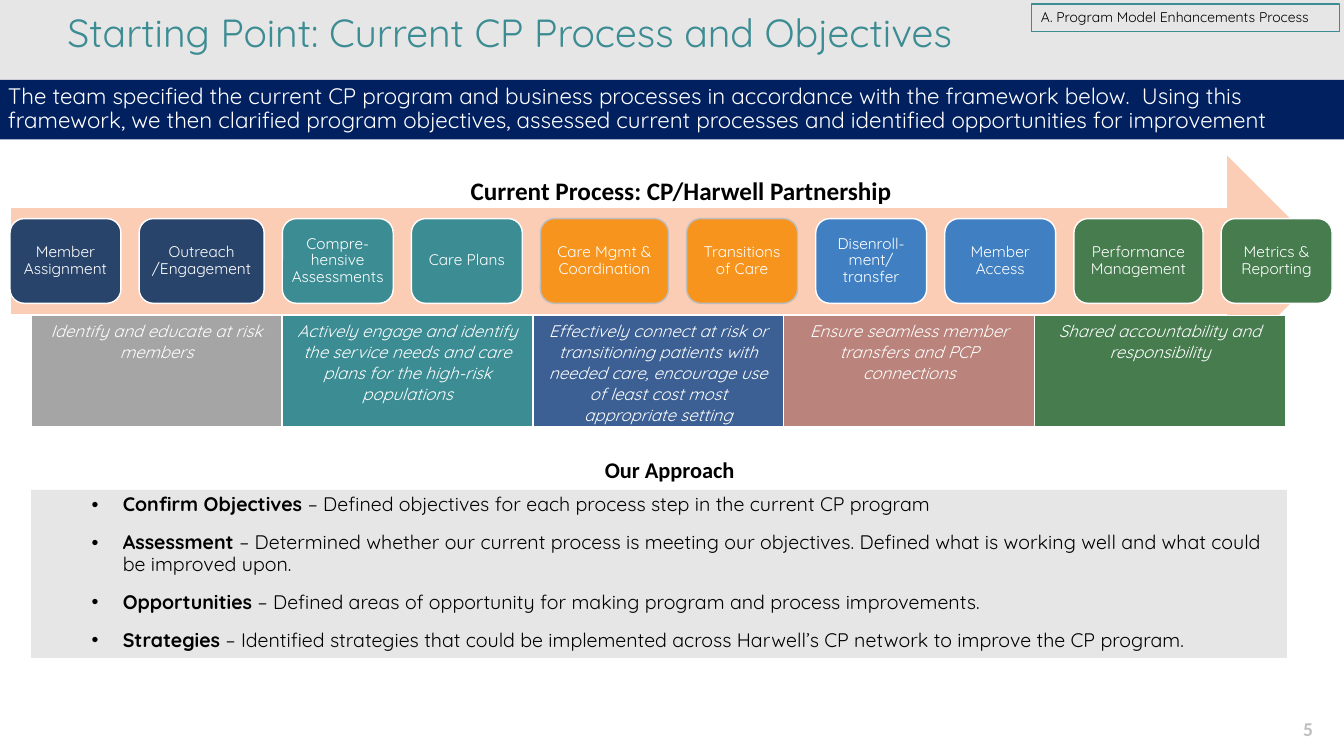
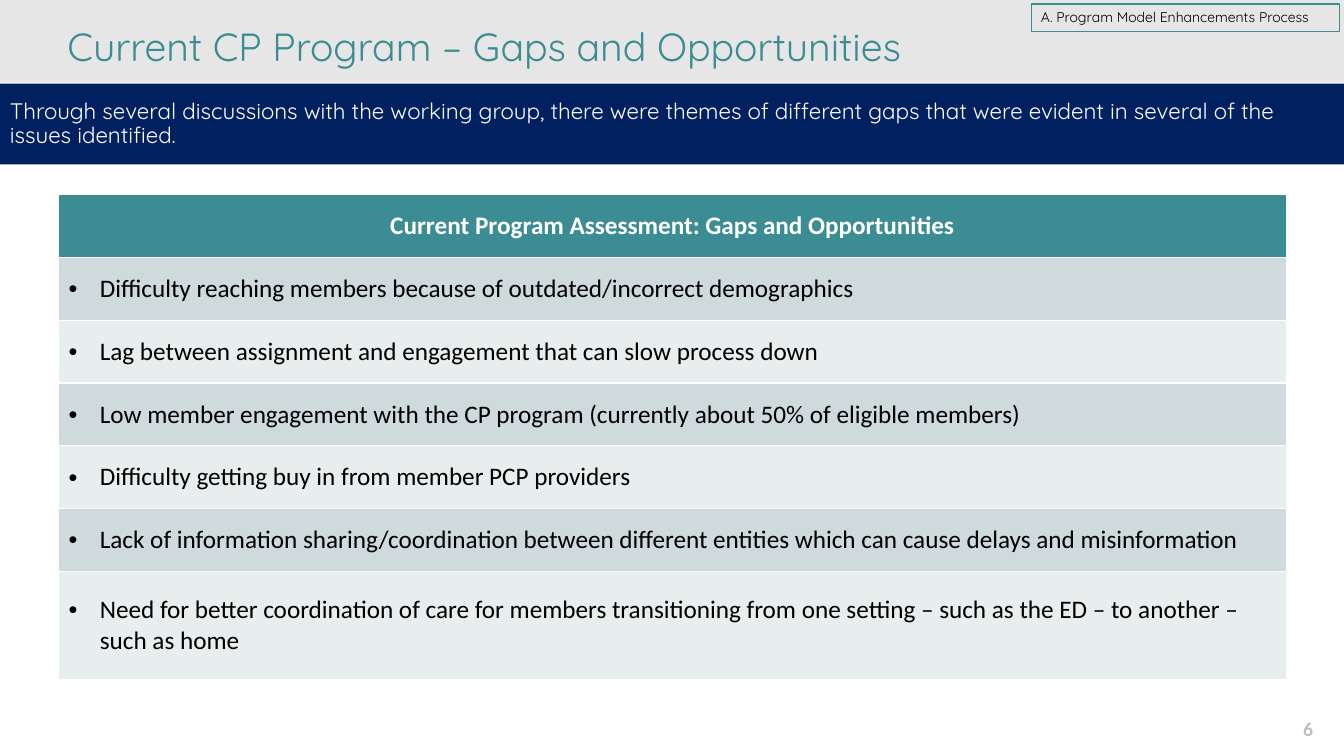
from dataclasses import dataclass

from lxml.etree import SubElement
from pptx import Presentation
from pptx.dml.color import RGBColor
from pptx.enum.shapes import MSO_SHAPE
from pptx.enum.text import MSO_ANCHOR, MSO_AUTO_SIZE, PP_ALIGN
from pptx.oxml.ns import qn
from pptx.util import Inches, Pt

WIDTH, HEIGHT = Inches(13.333), Inches(7.5)
COLUMNS, ROWS = 96, 54
FIRST_NUMBER = 5

WHITE = RGBColor(0xFF, 0xFF, 0xFF)
BLACK = RGBColor(0x00, 0x00, 0x00)
TEAL = RGBColor(0x3C, 0x8C, 0x93)
NAVY = RGBColor(0x00, 0x20, 0x60)
PALE_GREY = RGBColor(0xE7, 0xE6, 0xE6)
NUMBER_GREY = RGBColor(0xBF, 0xBF, 0xBF)
OUTLINE_GREY = RGBColor(0xBD, 0xBD, 0xBD)
GREY = RGBColor(0xA5, 0xA5, 0xA5)
PEACH = RGBColor(0xFB, 0xCD, 0xB5)
INDIGO = RGBColor(0x29, 0x44, 0x6B)
ORANGE = RGBColor(0xF7, 0x94, 0x1D)
BLUE = RGBColor(0x3F, 0x7F, 0xC2)
GREEN = RGBColor(0x46, 0x7C, 0x4E)
STEEL = RGBColor(0x3C, 0x60, 0x93)
ROSE = RGBColor(0xBA, 0x83, 0x7B)
STRIPES = (RGBColor(0xCE, 0xDA, 0xDC), RGBColor(0xE8, 0xEE, 0xEE))


@dataclass(frozen=True)
class Style:
    """Look of a paragraph."""
    size: int
    color: RGBColor = BLACK
    font: str = "Quicksand"
    bold: bool = False
    italic: bool = False
    align: PP_ALIGN = PP_ALIGN.LEFT
    spacing: float = 1.0


TITLE = Style(28, TEAL, spacing=0.9)
MESSAGE = Style(16, WHITE, spacing=0.9)
TAG = Style(10)
NUMBER = Style(14, NUMBER_GREY, "Calibri", bold=True, align=PP_ALIGN.RIGHT)
HEADING = Style(18, font="Calibri", bold=True, align=PP_ALIGN.CENTER)
SUBHEADING = Style(16, font="Calibri", bold=True)
STEP = Style(11, WHITE, align=PP_ALIGN.CENTER, spacing=0.9)
GOAL = Style(12, WHITE, italic=True, align=PP_ALIGN.CENTER)
APPROACH = Style(14, spacing=0.9)
GAP_HEADER = Style(18, WHITE, "Calibri", bold=True, align=PP_ALIGN.CENTER)
GAP = Style(18, font="Calibri")

STEP_WIDTH, STEP_GAP = 7.92, 1.3
STEPS = (
    ("Member Assignment", INDIGO, STEP_WIDTH),
    ("Outreach /Engagement", INDIGO, 8.93),
    ("Compre-hensive Assessments", TEAL, STEP_WIDTH),
    ("Care Plans", TEAL, STEP_WIDTH),
    ("Care Mgmt & Coordination", ORANGE, 9.14),
    ("Transitions of Care", ORANGE, STEP_WIDTH),
    ("Disenroll-ment/ transfer", BLUE, STEP_WIDTH),
    ("Member Access", BLUE, STEP_WIDTH),
    ("Performance Management", GREEN, 9.22),
    ("Metrics & Reporting", GREEN, STEP_WIDTH),
)
GOALS = (
    ("Identify and educate at risk members", GREY),
    ("Actively engage and identify the service needs and care plans for the "
     "high-risk populations", TEAL),
    ("Effectively connect at risk or transitioning patients with needed care, "
     "encourage use of least cost most appropriate setting", STEEL),
    ("Ensure seamless member transfers and PCP connections", ROSE),
    ("Shared accountability and responsibility", GREEN),
)
APPROACHES = (
    ("Confirm Objectives", " – Defined objectives for each process step in the "
     "current CP program"),
    ("Assessment", " – Determined whether our current process is meeting our "
     "objectives. Defined what is working well and what could be improved upon."),
    ("Opportunities", " – Defined areas of opportunity for making program and "
     "process improvements."),
    ("Strategies", " – Identified strategies that could be implemented across "
     "Harwell’s CP network to improve the CP program."),
)
GAPS = (
    "Difficulty reaching members because of outdated/incorrect demographics",
    "Lag between assignment and engagement that can slow process down",
    "Low member engagement with the CP program (currently about 50% of eligible "
    "members)",
    "Difficulty getting buy in from member PCP providers",
    "Lack of information sharing/coordination between different entities which can "
    "cause delays and misinformation",
    "Need for better coordination of care for members transitioning from one "
    "setting – such as the ED – to another – such as home",
)


def across(columns):
    """Turn grid columns into a length."""
    return round(WIDTH * columns / COLUMNS)


def down(rows):
    """Turn grid rows into a length."""
    return round(HEIGHT * rows / ROWS)


def place(left, top, width, height):
    """Turn a grid cell range into a position and size."""
    return across(left), down(top), across(width), down(height)


def format_paragraph(para, style):
    """Apply a style to a paragraph."""
    para.alignment = style.align
    para.line_spacing = style.spacing
    font = para.font
    font.name, font.size = style.font, Pt(style.size)
    font.bold, font.italic = style.bold, style.italic
    font.color.rgb = style.color


def add_bullet(para, margin):
    """Give a paragraph a hanging bullet."""
    properties = para._p.get_or_add_pPr()
    properties.set("marL", str(Inches(margin)))
    properties.set("indent", str(-Inches(0.31)))
    SubElement(properties, qn("a:buFont")).set("typeface", "Arial")
    SubElement(properties, qn("a:buChar")).set("char", "•")


def write(frame, text, style, anchor=MSO_ANCHOR.TOP):
    """Put one styled paragraph in a text frame."""
    frame.word_wrap = True
    frame.auto_size = MSO_AUTO_SIZE.NONE
    frame.vertical_anchor = anchor
    frame.text = text
    format_paragraph(frame.paragraphs[0], style)


def add_box(page, area, text, style, anchor=MSO_ANCHOR.TOP):
    """Add a text box."""
    box = page.shapes.add_textbox(*place(*area))
    write(box.text_frame, text, style, anchor)
    return box


def add_panel(page, area, fill=None, line=None, weight=1, kind=MSO_SHAPE.RECTANGLE):
    """Add a flat preset shape."""
    panel = page.shapes.add_shape(kind, *place(*area))
    panel.shadow.inherit = False
    if fill is None:
        panel.fill.background()
    else:
        panel.fill.solid()
        panel.fill.fore_color.rgb = fill
    if line is None:
        panel.line.fill.background()
    else:
        panel.line.color.rgb = line
        panel.line.width = Pt(weight)
    return panel


def fill_cell(cell, text, style, fill, anchor=MSO_ANCHOR.TOP, bulleted=False):
    """Write and colour a table cell."""
    cell.fill.solid()
    cell.fill.fore_color.rgb = fill
    cell.vertical_anchor = anchor
    cell.text = text
    para = cell.text_frame.paragraphs[0]
    if bulleted:
        add_bullet(para, 0.31)
    format_paragraph(para, style)


def add_number(page):
    """Add the slide number as a field."""
    box = add_box(page, (89.8, 50.6, 4.7, 2.9), "", NUMBER, MSO_ANCHOR.MIDDLE)
    para = box.text_frame.paragraphs[0]
    field = SubElement(para._p, qn("a:fld"))
    field.set("id", "{B6F15528-21DE-4FAA-801E-634DDDAF4B2B}")
    field.set("type", "slidenum")
    SubElement(field, qn("a:rPr")).set("lang", "en-US")
    SubElement(field, qn("a:t")).text = "‹#›"


def add_page(deck, title, title_top, message, message_area, anchor):
    """Add a slide with its title, message band, tag and number."""
    page = deck.slides.add_slide(deck.slide_layouts[5])
    heading = page.shapes.title
    heading.left, heading.top, heading.width, heading.height = place(
        4.1, title_top, 87.7, 4.75)
    write(heading.text_frame, title, TITLE, MSO_ANCHOR.MIDDLE)
    band = add_panel(page, (0, 0, COLUMNS, 5.9), PALE_GREY)
    heading._element.addprevious(band._element)
    strip = add_panel(page, message_area, NAVY)
    write(strip.text_frame, message, MESSAGE, anchor)
    tag = add_panel(page, (73.65, 0.29, 22.05, 1.94), line=TEAL, weight=0.75)
    write(tag.text_frame, "A. Program Model Enhancements Process", TAG)
    add_number(page)
    return page


def add_steps(page):
    """Add the process arrow and its row of steps."""
    add_panel(page, (0.8, 11.1, 94.4, 15.1), PEACH, kind=MSO_SHAPE.RIGHT_ARROW)
    left = 0.72
    for name, fill, width in STEPS:
        line = OUTLINE_GREY if fill == ORANGE else WHITE
        pill = add_panel(page, (left, 15.62, width, 6.05), fill, line,
                         kind=MSO_SHAPE.ROUNDED_RECTANGLE)
        frame = pill.text_frame
        frame.margin_left = frame.margin_right = Inches(0.05)
        write(frame, name, STEP, MSO_ANCHOR.MIDDLE)
        left += width + STEP_GAP


def add_goals(page):
    """Add the one-row table of goals."""
    area = place(2.23, 22.54, 89.6, 7.9)
    table = page.shapes.add_table(1, len(GOALS), *area).table
    for cell, (text, fill) in zip(table.rows[0].cells, GOALS):
        fill_cell(cell, text, GOAL, fill)
        cell.margin_bottom = 0


def add_approaches(page):
    """Add the bulleted panel of approaches."""
    frame = add_panel(page, (2.23, 35, 89.7, 12), PALE_GREY).text_frame
    frame.word_wrap = True
    frame.vertical_anchor = MSO_ANCHOR.TOP
    for index, (lead, rest) in enumerate(APPROACHES):
        para = frame.add_paragraph() if index else frame.paragraphs[0]
        add_bullet(para, 0.81)
        para.space_before = Pt(6 if index else 0)
        para.space_after = Pt(6)
        format_paragraph(para, APPROACH)
        span = para.add_run()
        span.text = lead
        span.font.bold = True
        para.add_run().text = rest


def add_gaps(page):
    """Add the table of gaps."""
    heights = [4.49] * len(GAPS) + [7.7]
    area = place(4.18, 13.9, 87.7, sum(heights))
    table = page.shapes.add_table(len(heights), 1, *area).table
    for row, height in zip(table.rows, heights):
        row.height = down(height)
    fill_cell(table.cell(0, 0), "Current Program Assessment: Gaps and Opportunities",
              GAP_HEADER, TEAL, MSO_ANCHOR.MIDDLE)
    for index, text in enumerate(GAPS):
        fill_cell(table.cell(index + 1, 0), text, GAP, STRIPES[index % 2],
                  MSO_ANCHOR.MIDDLE, bulleted=True)


def main():
    """Build and save the deck."""
    deck = Presentation()
    deck.slide_width, deck.slide_height = WIDTH, HEIGHT
    deck.element.set("firstSlideNum", str(FIRST_NUMBER))

    process = add_page(
        deck, "Starting Point: Current CP Process and Objectives", 0.14,
        "The team specified the current CP program and business processes in "
        "accordance with the framework below.  Using this framework, we then "
        "clarified program objectives, assessed current processes and identified "
        "opportunities for improvement", (-0.14, 5.7, 96.28, 4.25), MSO_ANCHOR.TOP)
    add_steps(process)
    add_box(process, (2.1, 12.3, 93.1, 2.6), "Current Process: CP/Harwell Partnership",
            HEADING, MSO_ANCHOR.MIDDLE)
    add_goals(process)
    add_box(process, (42.5, 32.26, 10.9, 2.66), "Our Approach", SUBHEADING)
    add_approaches(process)

    gaps = add_page(
        deck, "Current CP Program – Gaps and Opportunities", 1.08,
        "Through several discussions with the working group, there were themes of "
        "different gaps that were evident in several of the issues identified.",
        (0, 5.98, COLUMNS, 5.76), MSO_ANCHOR.MIDDLE)
    add_gaps(gaps)
    deck.save("out.pptx")


if __name__ == "__main__":
    main()
